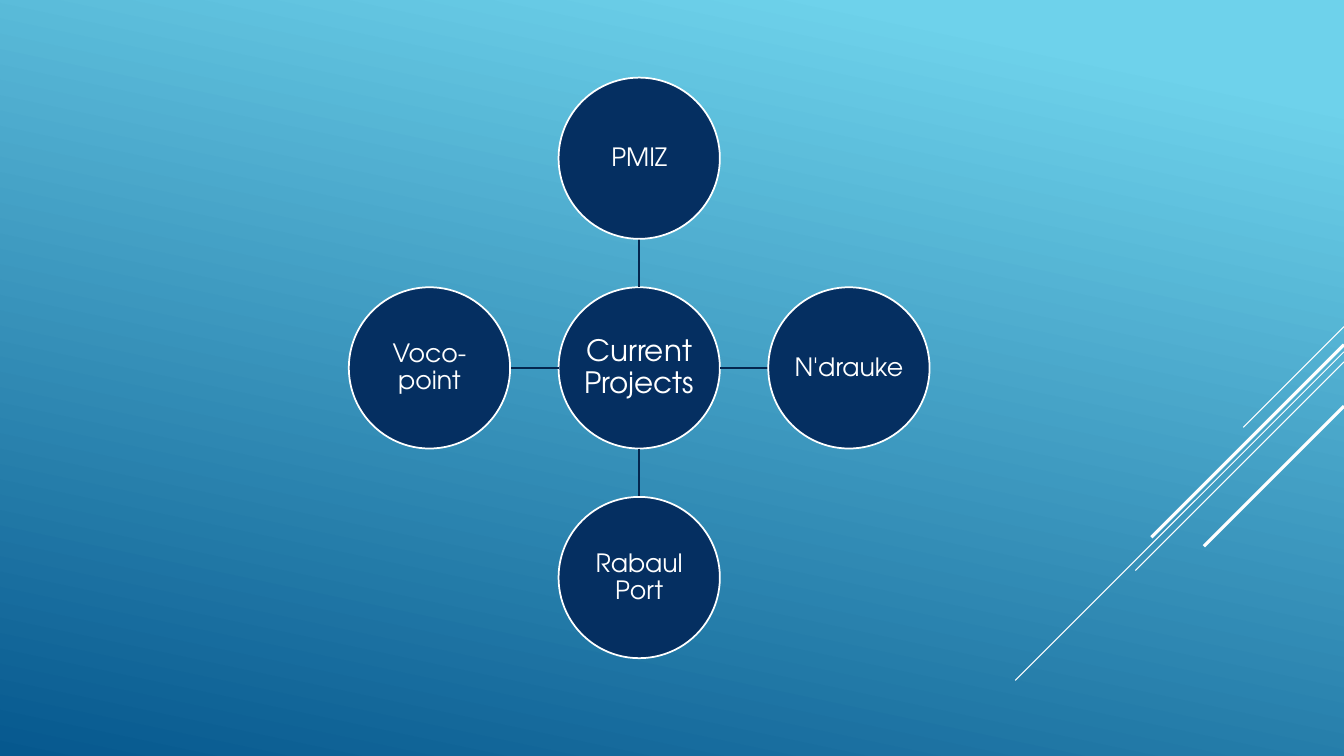
from pptx import Presentation
from pptx.dml.color import RGBColor
from pptx.enum.shapes import MSO_CONNECTOR, MSO_SHAPE
from pptx.enum.text import MSO_ANCHOR, PP_ALIGN
from pptx.oxml.ns import qn
from pptx.util import Inches, Pt
from lxml import etree

STRAIGHT = MSO_CONNECTOR.STRAIGHT
ELLIPSE = MSO_SHAPE.OVAL
MIDDLE = MSO_ANCHOR.MIDDLE
CENTER = PP_ALIGN.CENTER

FONT = "TeX Gyre Adventor"
WHITE, NAVY, SPOKE = "FFFFFF", "052F61", "04264E"
WIDTH, HEIGHT = 13.33, 7.5
HUB_X, HUB_Y = 6.34, 3.65
DIAMETER, SPACING = 1.6, 2.08
RADIUS = DIAMETER / 2


def color(value):
    return RGBColor.from_string(value)


def add_line(x1, y1, x2, y2, line_color, weight):
    line = page.shapes.add_connector(
        STRAIGHT, Inches(x1), Inches(y1), Inches(x2), Inches(y2))
    line.line.color.rgb = color(line_color)
    line.line.width = Pt(weight)
    etree.SubElement(line._element.spPr, qn("a:effectLst"))


deck = Presentation()
deck.slide_width, deck.slide_height = Inches(WIDTH), Inches(HEIGHT)
page = deck.slides.add_slide(deck.slide_layouts[6])

# Background gradient (the angle is counted counter-clockwise)
background = page.background.fill
background.gradient()
background.gradient_angle = 360 - 102
stops = [(0.1, "6ED2EB"), (1, "06588E")]
for stop, (position, stop_color) in zip(background.gradient_stops, stops):
    stop.position = position
    stop.color.rgb = color(stop_color)

# Diagonal lines at 45 degrees from the right edge: top, length across, weight
for top, run, weight in [(3.24, 1, 0.75), (3.49, 3.26, 0.75),
                         (3.59, 2.07, 0.75), (3.42, 1.91, 2.25),
                         (4.03, 1.39, 2.25)]:
    add_line(WIDTH, top, WIDTH - run, top + run, WHITE, weight)

# Hub and its projects: label, direction from the hub, text size
circles = [
    ("Current Projects", 0, 0, 21),
    ("PMIZ", 0, -1, 18),
    ("N'drauke", 1, 0, 18),
    ("Rabaul Port", 0, 1, 18),
    ("Voco-point", -1, 0, 18),
]
for label, dx, dy, size in circles:
    # Spoke between the rims of the hub and the project
    if dx or dy:
        reach = SPACING - RADIUS
        add_line(HUB_X + dx * RADIUS, HUB_Y + dy * RADIUS,
                 HUB_X + dx * reach, HUB_Y + dy * reach, SPOKE, 1.25)

    circle = page.shapes.add_shape(
        ELLIPSE,
        Inches(HUB_X + dx * SPACING - RADIUS),
        Inches(HUB_Y + dy * SPACING - RADIUS),
        Inches(DIAMETER), Inches(DIAMETER))
    circle.shadow.inherit = False
    circle.fill.solid()
    circle.fill.fore_color.rgb = color(NAVY)
    circle.line.color.rgb = color(WHITE)
    circle.line.width = Pt(1.25)

    frame = circle.text_frame
    frame.text = label
    frame.word_wrap = True
    frame.vertical_anchor = MIDDLE
    frame.margin_left = frame.margin_right = Inches(0.01)
    frame.margin_top = frame.margin_bottom = Inches(0.01)
    para = frame.paragraphs[0]
    para.alignment = CENTER
    para.line_spacing = 0.9
    span = para.runs[0]
    span.font.name = FONT
    span.font.size = Pt(size)
    span.font.color.rgb = color(WHITE)

deck.save("out.pptx")
